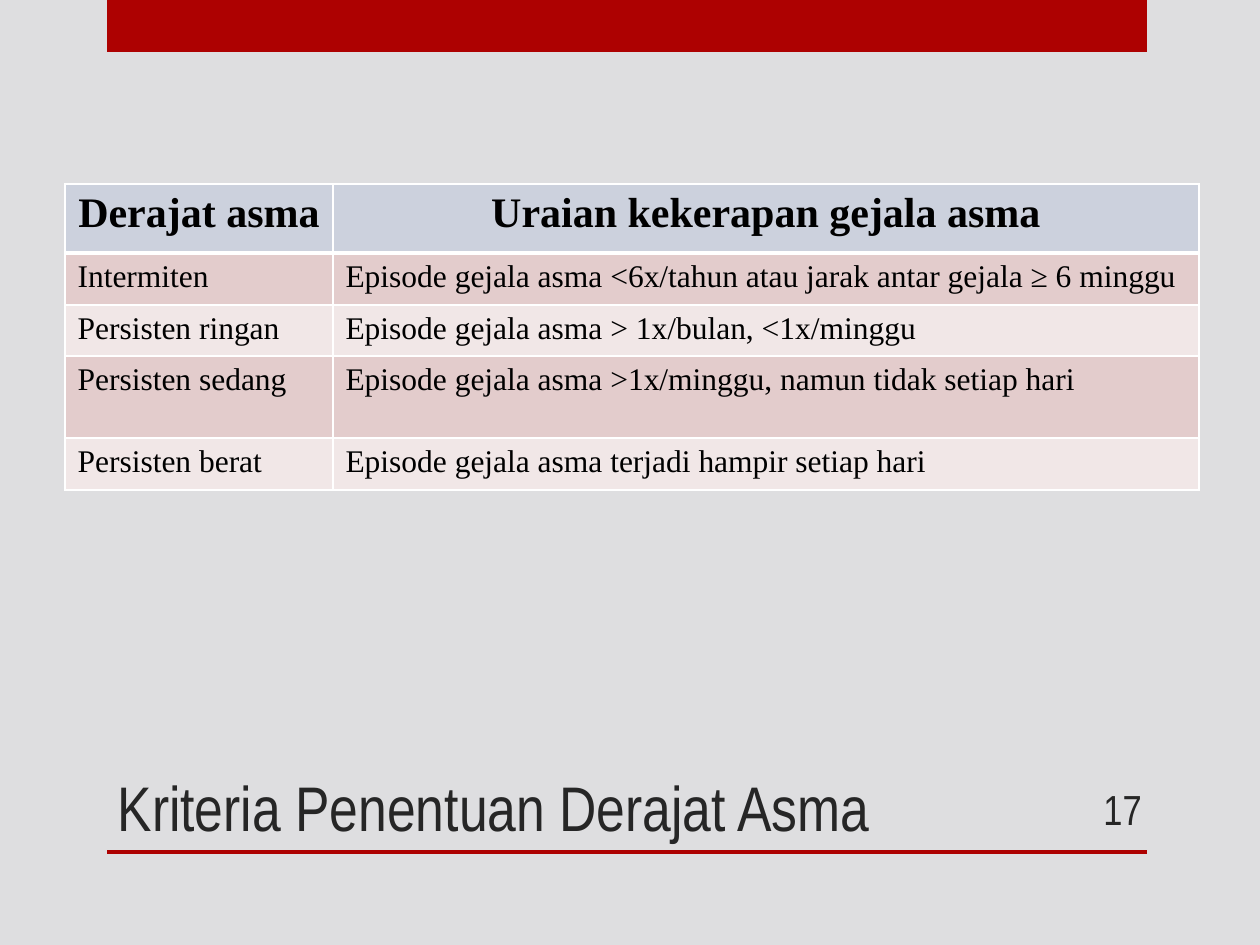
"""Builds the slide on criteria for grading asthma severity."""
from dataclasses import dataclass

from lxml import etree
from pptx import Presentation
from pptx import util as u
from pptx.dml.color import RGBColor
from pptx.enum import shapes, text
from pptx.oxml.ns import qn

PX = 914400 / 126
COLORS = {
    "background": "DEDEE0",
    "accent": "AD0101",
    "heading": "262626",
    "body": "000000",
    "border": "FFFFFF",
    "header": "CCD1DD",
    "odd": "E3CCCC",
    "even": "F1E7E7",
}
HEADING_FONT = "Arial Narrow"
TABLE_FONT = "Times New Roman"


@dataclass(frozen=True)
class Box:
    left: int
    top: int
    width: int
    height: int

    def emu(self) -> list[u.Emu]:
        return [px(v) for v in (self.left, self.top, self.width, self.height)]


@dataclass(frozen=True)
class Row:
    degree: str
    symptoms: str
    height: int


BARS = [Box(107, 0, 1040, 52), Box(107, 850, 1040, 4)]
TITLE = Box(105, 630, 935, 220)
NUMBER = Box(1050, 784, 104, 50)
TABLE = Box(65, 184, 1134, 306)
COLUMNS = [268, 866]
ROWS = [
    Row("Derajat asma", "Uraian kekerapan gejala asma", 69),
    Row("Intermiten", "Episode gejala asma <6x/tahun atau jarak antar gejala ≥ 6 minggu", 52),
    Row("Persisten ringan", "Episode gejala asma > 1x/bulan, <1x/minggu", 51),
    Row("Persisten sedang", "Episode gejala asma >1x/minggu, namun tidak setiap hari", 82),
    Row("Persisten berat", "Episode gejala asma terjadi hampir setiap hari", 52),
]


def px(value: int) -> u.Emu:
    return u.Emu(round(value * PX))


def rgb(name: str) -> RGBColor:
    return RGBColor.from_string(COLORS[name])


def add_run(p, words: str, font: str, size: int, color: str, bold: bool = False) -> None:
    r = p.add_run()
    r.text = words
    r.font.name = font
    r.font.size = u.Pt(size)
    r.font.bold = bold
    r.font.color.rgb = rgb(color)


def add_bar(s, box: Box) -> None:
    sp = s.shapes.add_shape(shapes.MSO_SHAPE.RECTANGLE, *box.emu())
    sp.shadow.inherit = False
    sp.fill.solid()
    sp.fill.fore_color.rgb = rgb("accent")
    sp.line.fill.background()


def add_title(s, box: Box, words: str) -> None:
    sp = s.shapes.title
    sp.left, sp.top, sp.width, sp.height = box.emu()
    tf = sp.text_frame
    tf.word_wrap = True
    tf.auto_size = text.MSO_AUTO_SIZE.NONE
    tf.vertical_anchor = text.MSO_ANCHOR.BOTTOM
    p = tf.paragraphs[0]
    p.alignment = text.PP_ALIGN.LEFT
    add_run(p, words, HEADING_FONT, 36, "heading")


def add_number(s, box: Box, words: str) -> None:
    tf = s.shapes.add_textbox(*box.emu()).text_frame
    tf.word_wrap = True
    tf.vertical_anchor = text.MSO_ANCHOR.MIDDLE
    p = tf.paragraphs[0]
    p.alignment = text.PP_ALIGN.RIGHT
    add_run(p, words, HEADING_FONT, 24, "heading")


def set_borders(cell, top: int, bottom: int) -> None:
    tc_pr = cell._tc.get_or_add_tcPr()
    for side, points in (("L", 1), ("R", 1), ("T", top), ("B", bottom)):
        ln = etree.SubElement(tc_pr, qn(f"a:ln{side}"), w=str(u.Pt(points)))
        fill = etree.SubElement(ln, qn("a:solidFill"))
        etree.SubElement(fill, qn("a:srgbClr"), val=COLORS["border"])


def add_degree_table(s, box: Box, rows: list[Row]) -> None:
    table = s.shapes.add_table(len(rows), len(COLUMNS), *box.emu()).table
    for column, width in zip(table.columns, COLUMNS):
        column.width = px(width)
    for i, row in enumerate(rows):
        header = i == 0
        fill = "header" if header else "odd" if i % 2 else "even"
        table.rows[i].height = px(row.height)
        for cell, words in zip(table.rows[i].cells, (row.degree, row.symptoms)):
            set_borders(cell, top=3 if i == 1 else 1, bottom=3 if header else 1)
            cell.fill.solid()
            cell.fill.fore_color.rgb = rgb(fill)
            p = cell.text_frame.paragraphs[0]
            p.alignment = text.PP_ALIGN.CENTER if header else text.PP_ALIGN.LEFT
            add_run(p, words, TABLE_FONT, 24 if header else 18, "body", header)


def main() -> None:
    prs = Presentation()
    prs.slide_width, prs.slide_height = px(1260), px(945)
    s = prs.slides.add_slide(prs.slide_layouts[5])
    s.background.fill.solid()
    s.background.fill.fore_color.rgb = rgb("background")
    for bar in BARS:
        add_bar(s, bar)
    add_title(s, TITLE, "Kriteria Penentuan Derajat Asma")
    add_degree_table(s, TABLE, ROWS)
    add_number(s, NUMBER, "17")
    prs.save("out.pptx")


if __name__ == "__main__":
    main()
